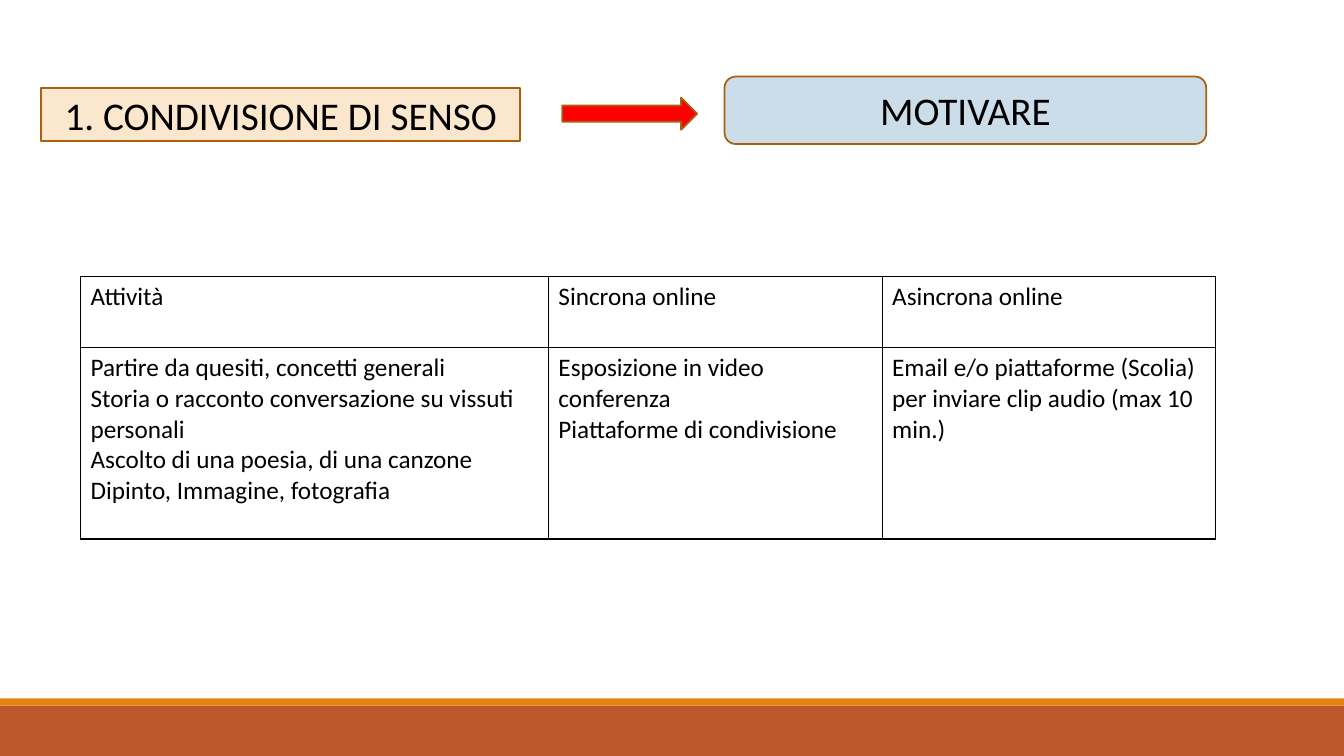
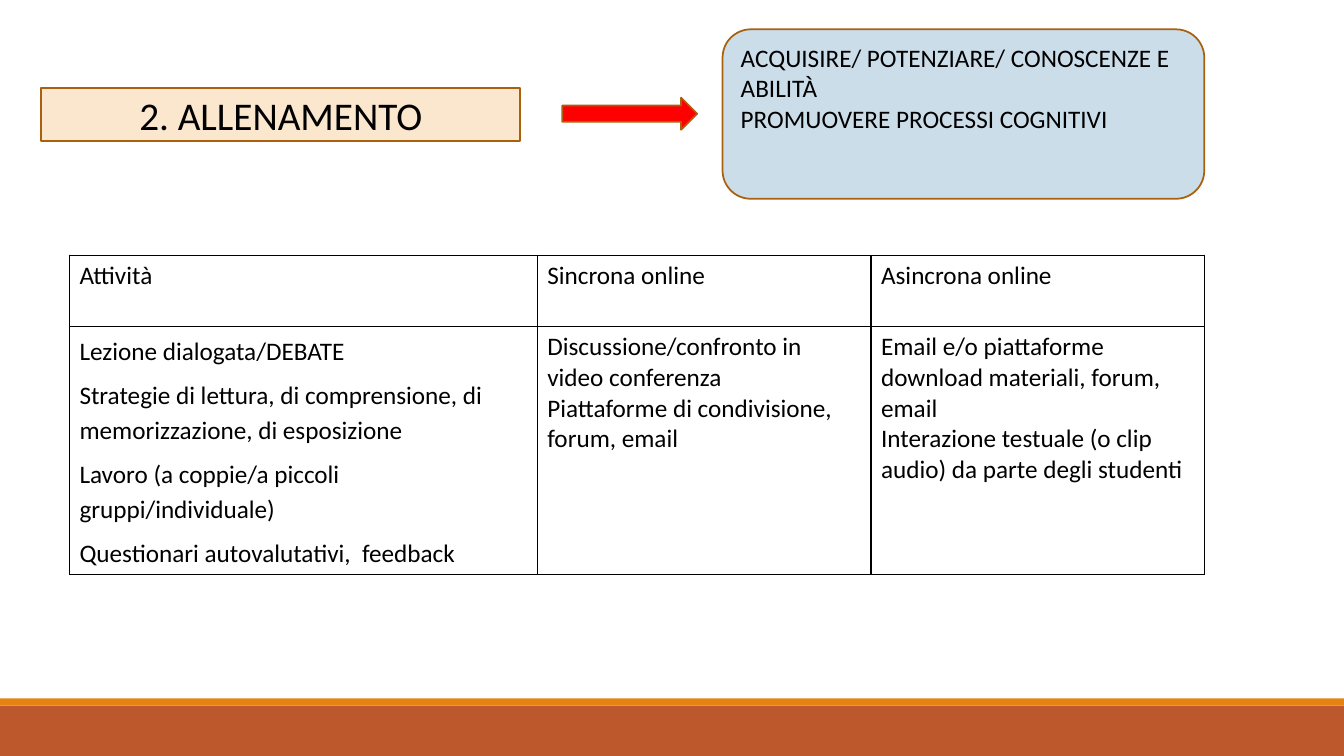
from lxml import etree
from pptx import Presentation, util as u
from pptx.dml.color import RGBColor
from pptx.enum import shapes, text
from pptx.oxml import ns

FONT = "Calibri"
BLACK, WHITE, RED = "000000", "FFFFFF", "FF0000"
RUST, ORANGE, BROWN = "BD582C", "E48312", "A9610D"
CREAM, PALE_BLUE = "FBE6CE", "CCDDEA"
WIDTH, HEIGHT = 33.87, 19.05
COLUMNS = (11.79, 8.41, 8.41)
HEADERS = ["Attività"], ["Sincrona online"], ["Asincrona online"]
TITLE_BOX = (1.04, 2.21, 12.07, 1.35)
ARROW_BOX = (14.17, 2.46, 3.4, 0.81)
BANDS = ((17.78, 1.27, RUST), (17.6, 0.18, ORANGE))

SLIDES = [
    {
        "title": "1. CONDIVISIONE DI SENSO",
        "goal": ["MOTIVARE"],
        "goal_box": (18.26, 1.93, 12.14, 1.7),
        "goal_style": {"size": 28, "align": text.PP_ALIGN.CENTER},
        "goal_anchor": text.MSO_ANCHOR.MIDDLE,
        "table_at": (2.03, 6.96),
        "rows": (1.8, 4.82),
        "activity_style": {},
        "cells": (
            ["Partire da quesiti, concetti generali",
             "Storia o racconto conversazione su vissuti personali",
             "Ascolto di una poesia, di una canzone",
             "Dipinto, Immagine, fotografia"],
            ["Esposizione in video conferenza",
             "Piattaforme di condivisione"],
            ["Email e/o piattaforme (Scolia) per inviare clip audio (max 10 min.)"],
        ),
    },
    {
        "title": "2. ALLENAMENTO",
        "goal": ["ACQUISIRE/ POTENZIARE/ CONOSCENZE E ABILITÀ",
                 "PROMUOVERE PROCESSI COGNITIVI"],
        "goal_box": (18.21, 0.74, 12.14, 4.27),
        "goal_style": {"size": 18},
        "goal_anchor": text.MSO_ANCHOR.TOP,
        "table_at": (1.75, 6.43),
        "rows": (1.8, 6.15),
        "activity_style": {"spacing": 1.15, "before": 6},
        "cells": (
            ["Lezione dialogata/DEBATE",
             "Strategie di lettura, di comprensione, di memorizzazione, di esposizione",
             "Lavoro (a coppie/a piccoli gruppi/individuale)",
             "Questionari autovalutativi,  feedback"],
            ["Discussione/confronto in video conferenza",
             "Piattaforme di condivisione, forum, email"],
            ["Email e/o piattaforme download materiali, forum, email",
             "Interazione testuale (o clip audio) da parte degli studenti"],
        ),
    },
]


def paint(fmt, color):
    """Fill a shape, line or cell format with a solid hex colour."""
    fmt.solid()
    fmt.fore_color.rgb = RGBColor.from_string(color)


def outline(sp, color):
    """Give a shape a thin outline."""
    paint(sp.line.fill, color)
    sp.line.width = u.Pt(1.25)


def write(tf, lines, size=18, align=text.PP_ALIGN.LEFT, spacing=1.0, before=0):
    """Write one formatted paragraph per line of text."""
    tf.word_wrap = True
    tf.text = "\n".join(lines)
    for p in tf.paragraphs:
        p.alignment = align
        p.line_spacing = spacing
        p.space_before = u.Pt(before)
        for r in p.runs:
            r.font.name = FONT
            r.font.size = u.Pt(size)
            r.font.bold = False
            r.font.color.rgb = RGBColor.from_string(BLACK)


def add_box(s, kind, box, fill, line=None):
    """Add a flat preset shape."""
    sp = s.shapes.add_shape(kind, *map(u.Cm, box))
    sp.shadow.inherit = False
    paint(sp.fill, fill)
    if line:
        outline(sp, line)
    else:
        sp.line.fill.background()
    return sp


def add_bands(s, layout):
    """Place the footer bands on the layout that the slides share."""
    for top, height, color in BANDS:
        sp = add_box(s, shapes.MSO_SHAPE.RECTANGLE, (0, top, WIDTH, height), color)
        layout.shapes.element.append(sp.element)


def set_title(s, title):
    """Place the title placeholder as a framed label."""
    sp = s.shapes.title
    sp.left, sp.top, sp.width, sp.height = map(u.Cm, TITLE_BOX)
    paint(sp.fill, CREAM)
    outline(sp, BROWN)
    write(sp.text_frame, [title], 28, text.PP_ALIGN.CENTER)
    sp.text_frame.auto_size = text.MSO_AUTO_SIZE.NONE
    sp.text_frame.vertical_anchor = text.MSO_ANCHOR.MIDDLE


def add_borders(cell):
    """Draw a black line on each side of a cell."""
    tc_pr = cell._tc.get_or_add_tcPr()
    for i, side in enumerate(("lnL", "lnR", "lnT", "lnB")):
        ln = etree.Element(ns.qn(f"a:{side}"), w=str(u.Pt(1)))
        fill = etree.SubElement(ln, ns.qn("a:solidFill"))
        etree.SubElement(fill, ns.qn("a:srgbClr"), val=BLACK)
        tc_pr.insert(i, ln)


def add_grid(s, at, heights, cells, activity_style):
    """Add the activity table with its header row."""
    size = (sum(COLUMNS), sum(heights))
    tbl = s.shapes.add_table(2, len(COLUMNS), *map(u.Cm, at + size)).table
    tbl.first_row = tbl.horz_banding = False
    for col, width in zip(tbl.columns, COLUMNS):
        col.width = u.Cm(width)
    for i, (height, row) in enumerate(zip(heights, (HEADERS, cells))):
        tbl.rows[i].height = u.Cm(height)
        for j, lines in enumerate(row):
            cell = tbl.cell(i, j)
            cell.fill.background()
            add_borders(cell)
            style = activity_style if (i, j) == (1, 0) else {}
            write(cell.text_frame, lines, **style)


def add_phase(s, phase):
    """Fill a slide with a phase, its goal and its activities."""
    set_title(s, phase["title"])
    goal = add_box(s, shapes.MSO_SHAPE.ROUNDED_RECTANGLE, phase["goal_box"], PALE_BLUE, BROWN)
    write(goal.text_frame, phase["goal"], **phase["goal_style"])
    goal.text_frame.vertical_anchor = phase["goal_anchor"]
    add_grid(s, phase["table_at"], phase["rows"], phase["cells"], phase["activity_style"])
    add_box(s, shapes.MSO_SHAPE.RIGHT_ARROW, ARROW_BOX, RED, BROWN)


def main():
    """Build and save the presentation."""
    prs = Presentation()
    prs.slide_width, prs.slide_height = u.Cm(WIDTH), u.Cm(HEIGHT)
    layout = prs.slide_layouts.get_by_name("Title Only")
    paint(prs.slide_master.background.fill, WHITE)
    for i, phase in enumerate(SLIDES):
        s = prs.slides.add_slide(layout)
        if i == 0:
            add_bands(s, layout)
        add_phase(s, phase)
    prs.save("out.pptx")


if __name__ == "__main__":
    main()
